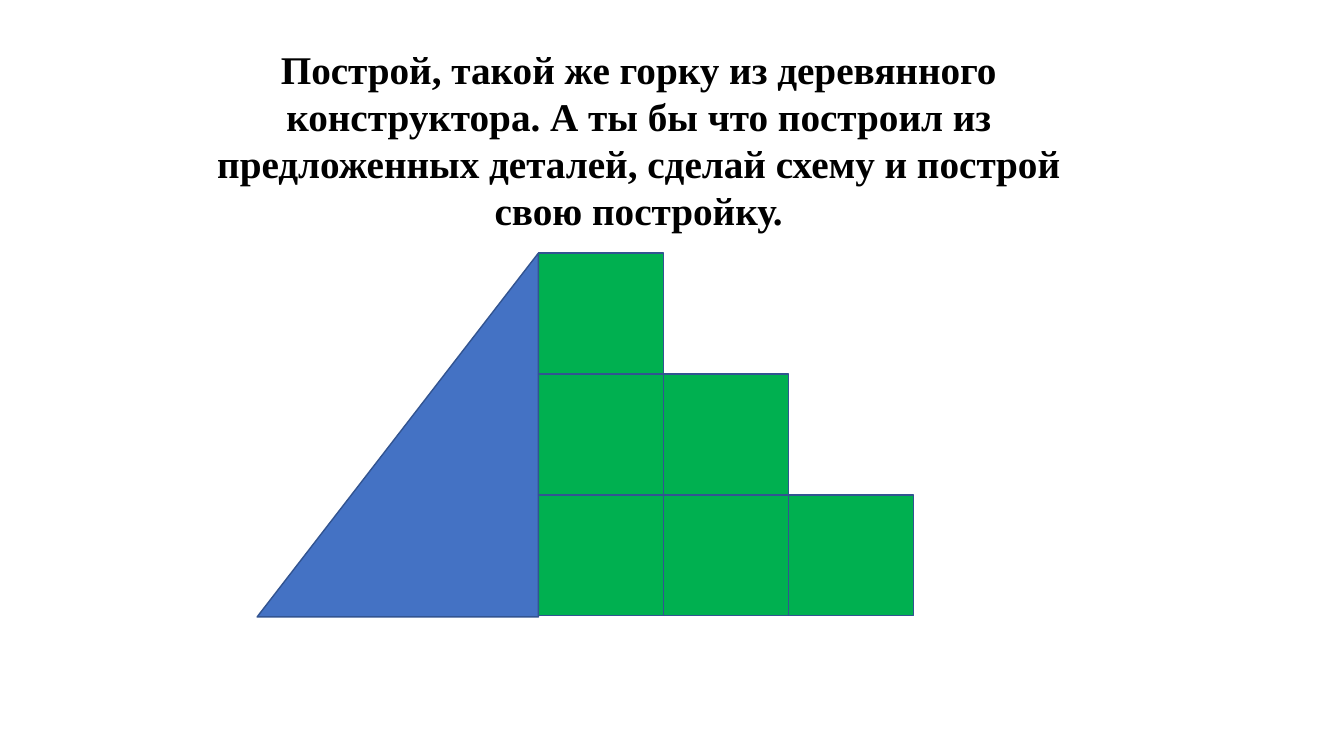
from pptx import Presentation
from pptx import util as u
from pptx.dml.color import RGBColor
from pptx.enum import shapes, text

PX = 9144  # EMU in one px, 100 px to the inch
STEPS = 3
BLOCK_W, BLOCK_H = 124, 120
STAIRS_LEFT, STAIRS_TOP = 534, 251
SLOPE_W, SLOPE_H = 279, 361
TASK = ("Построй, такой же горку из деревянного конструктора. "
        "А ты бы что построил из предложенных деталей, "
        "сделай схему и построй свою постройку.")


def px(*lengths):
    return [round(length * PX) for length in lengths]


def color(hex_code):
    return RGBColor.from_string(hex_code)


def add_piece(slide, kind, box, fill, rotation=0):
    """Add one outlined part of the construction set."""
    piece = slide.shapes.add_shape(kind, *px(*box))
    piece.rotation = rotation
    piece.shadow.inherit = False
    piece.fill.solid()
    piece.fill.fore_color.rgb = color(fill)
    piece.line.color.rgb = color("325491")
    piece.line.width = u.Pt(1)


def add_text(slide, wording, box, *, size, font, ink="000000", bold=False,
             align=text.PP_ALIGN.LEFT):
    frame = slide.shapes.add_textbox(*px(*box)).text_frame
    frame.word_wrap = True
    frame.auto_size = text.MSO_AUTO_SIZE.SHAPE_TO_FIT_TEXT
    paragraph = frame.paragraphs[0]
    paragraph.alignment = align
    run = paragraph.add_run()
    run.text = wording
    run.font.size = u.Pt(size)
    run.font.name = font
    run.font.bold = bold
    run.font.color.rgb = color(ink)


def add_stairs(slide):
    for row in range(STEPS):
        for column in range(row + 1):
            box = (STAIRS_LEFT + column * BLOCK_W, STAIRS_TOP + row * BLOCK_H,
                   BLOCK_W, BLOCK_H)
            add_piece(slide, shapes.MSO_SHAPE.RECTANGLE, box, "00B050")


def add_slope(slide):
    """Add the triangle, turned so that its upright side meets the stairs."""
    center_x = STAIRS_LEFT - SLOPE_W / 2
    center_y = STAIRS_TOP + SLOPE_H / 2
    box = (center_x - SLOPE_H / 2, center_y - SLOPE_W / 2, SLOPE_H, SLOPE_W)
    add_piece(slide, shapes.MSO_SHAPE.RIGHT_TRIANGLE, box, "4472C4", rotation=270)


def main():
    deck = Presentation()
    deck.slide_width, deck.slide_height = px(1333, 750)
    slide = deck.slides.add_slide(deck.slide_layouts[6])
    add_stairs(slide)
    add_slope(slide)
    add_text(slide, TASK, (177, 40, 913, 199), size=28, font="Times New Roman",
             bold=True, align=text.PP_ALIGN.CENTER)
    deck.save("out.pptx")


if __name__ == "__main__":
    main()
